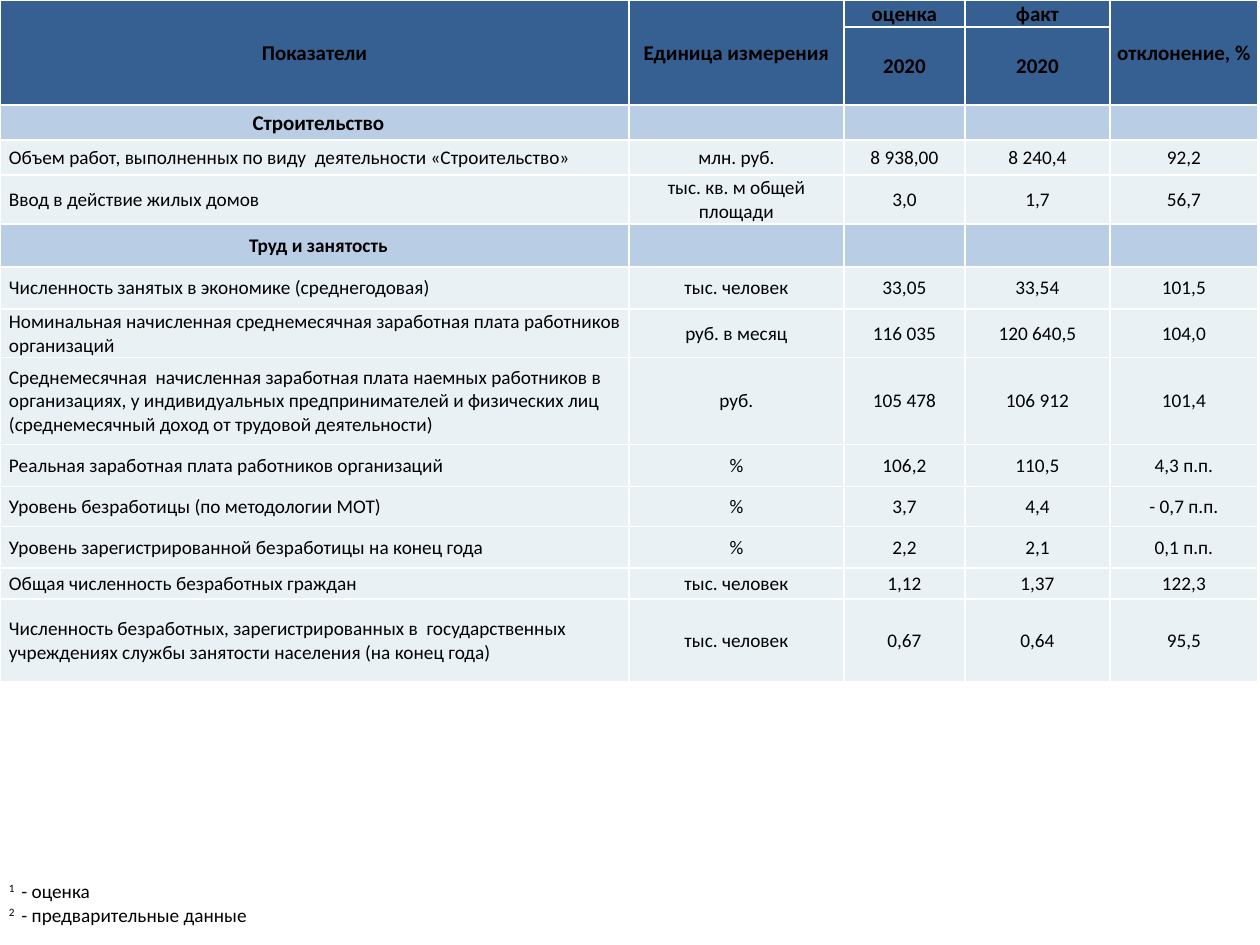
from pptx import Presentation
from pptx import util as u
from pptx.dml.color import RGBColor
from pptx.enum import text
from pptx.oxml import ns
from lxml import etree

PX = 914400 / 126
HUES = {"head": "376092", "part": "B9CDE5", "row": "E9F1F5",
        "page": "FFFFFF", "ink": "000000"}
MID = text.PP_ALIGN.CENTER
LEFT = text.PP_ALIGN.LEFT


def px(n):
    return u.Emu(round(n * PX))


class Deck:
    font = "Calibri"

    def __init__(self, wide, high):
        self.prs = Presentation()
        self.prs.slide_width, self.prs.slide_height = px(wide), px(high)
        self.slide = self.prs.slides.add_slide(self.prs.slide_layouts[6])

    def table(self, left, top, cols, rows):
        grid = self.slide.shapes.add_table(
            len(rows), len(cols), px(left), px(top),
            px(sum(cols)), px(sum(rows))).table
        grid.first_row = grid.horz_banding = False
        for col, wide in zip(grid.columns, cols):
            col.width = px(wide)
        for row, high in zip(grid.rows, rows):
            row.height = px(high)
        return grid

    def edge(self, cell):
        props = cell._tc.get_or_add_tcPr()
        for side in ("lnL", "lnR", "lnT", "lnB"):
            line = etree.SubElement(props, ns.qn("a:" + side), w="12700")
            fill = etree.SubElement(line, ns.qn("a:solidFill"))
            etree.SubElement(fill, ns.qn("a:srgbClr"), val=HUES["page"])

    def style(self, run, size, bold=False):
        run.font.name = self.font
        run.font.size = u.Pt(size)
        run.font.bold = bold
        run.font.color.rgb = RGBColor.from_string(HUES["ink"])

    def cell(self, cell, words, hue, size=11, bold=False, align=MID, pad=1):
        self.edge(cell)
        cell.fill.solid()
        cell.fill.fore_color.rgb = RGBColor.from_string(HUES[hue])
        cell.margin_left, cell.margin_right = px(pad), px(1)
        cell.margin_top, cell.margin_bottom = px(1), 0
        cell.vertical_anchor = text.MSO_ANCHOR.MIDDLE
        cell.text_frame.text = words
        for para in cell.text_frame.paragraphs:
            para.alignment = align
            para._p.get_or_add_endParaRPr().set("sz", str(size * 100))
            for run in para.runs:
                self.style(run, size, bold)

    def notes(self, cell, lines):
        self.cell(cell, "\n".join(mark for mark, _ in lines), "page",
                  align=LEFT, pad=9)
        for para, (_, words) in zip(cell.text_frame.paragraphs, lines):
            para.runs[0].font._element.set("baseline", "30000")
            run = para.add_run()
            run.text = words
            self.style(run, 11)

    def save(self):
        self.prs.save("out.pptx")


COLS = [629, 215, 121, 145, 148]
HEAD = [
    (27, ["Показатели", "Единица измерения", "оценка", "факт", "отклонение, %"]),
    (78, ["", "", "2020", "2020", ""]),
]
BODY = [
    (35, ["Строительство"]),
    (35, ["Объем работ, выполненных по виду  деятельности «Строительство»",
          "млн. руб.", "8 938,00", "8 240,4", "92,2"]),
    (49, ["Ввод в действие жилых домов",
          "тыс. кв. м общей площади", "3,0", "1,7", "56,7"]),
    (43, ["Труд и занятость"]),
    (42, ["Численность занятых в экономике (среднегодовая)",
          "тыс. человек", "33,05", "33,54", "101,5"]),
    (48, ["Номинальная начисленная среднемесячная заработная плата "
          "работников организаций",
          "руб. в месяц", "116 035", "120 640,5", "104,0"]),
    (87, ["Среднемесячная  начисленная заработная плата наемных работников "
          "в организациях, у индивидуальных предпринимателей и физических лиц "
          "(среднемесячный доход от трудовой деятельности)",
          "руб.", "105 478", "106 912", "101,4"]),
    (42, ["Реальная заработная плата работников организаций",
          "%", "106,2", "110,5", "4,3 п.п."]),
    (40, ["Уровень безработицы (по методологии МОТ)",
          "%", "3,7", "4,4", "- 0,7 п.п."]),
    (42, ["Уровень зарегистрированной безработицы на конец года",
          "%", "2,2", "2,1", "0,1 п.п."]),
    (31, ["Общая численность безработных граждан",
          "тыс. человек", "1,12", "1,37", "122,3"]),
    (83, ["Численность безработных, зарегистрированных в  государственных "
          "учреждениях службы занятости населения (на конец года)",
          "тыс. человек", "0,67", "0,64", "95,5"]),
]
NOTES = [("1 ", " - оценка"), ("2 ", " - предварительные данные")]


def main():
    deck = Deck(1260, 945)
    grid = deck.table(0, 0, COLS, [high for high, _ in HEAD + BODY])
    for r, (_, words) in enumerate(HEAD):
        for c, word in enumerate(words):
            deck.cell(grid.cell(r, c), word, "head", 12, True)
    for c in (0, 1, 4):
        grid.cell(0, c).merge(grid.cell(1, c))

    for r, (_, words) in enumerate(BODY, len(HEAD)):
        part = len(words) == 1
        hue = "part" if part else "row"
        size = 12 if r == len(HEAD) else 11
        for c in range(len(COLS)):
            word = words[c] if c < len(words) else ""
            align = LEFT if c == 0 and not part else MID
            deck.cell(grid.cell(r, c), word, hue, size, part, align,
                      1 if c else 9)

    foot = deck.table(0, 879, [1260], [48])
    deck.notes(foot.cell(0, 0), NOTES)
    deck.save()


if __name__ == "__main__":
    main()
